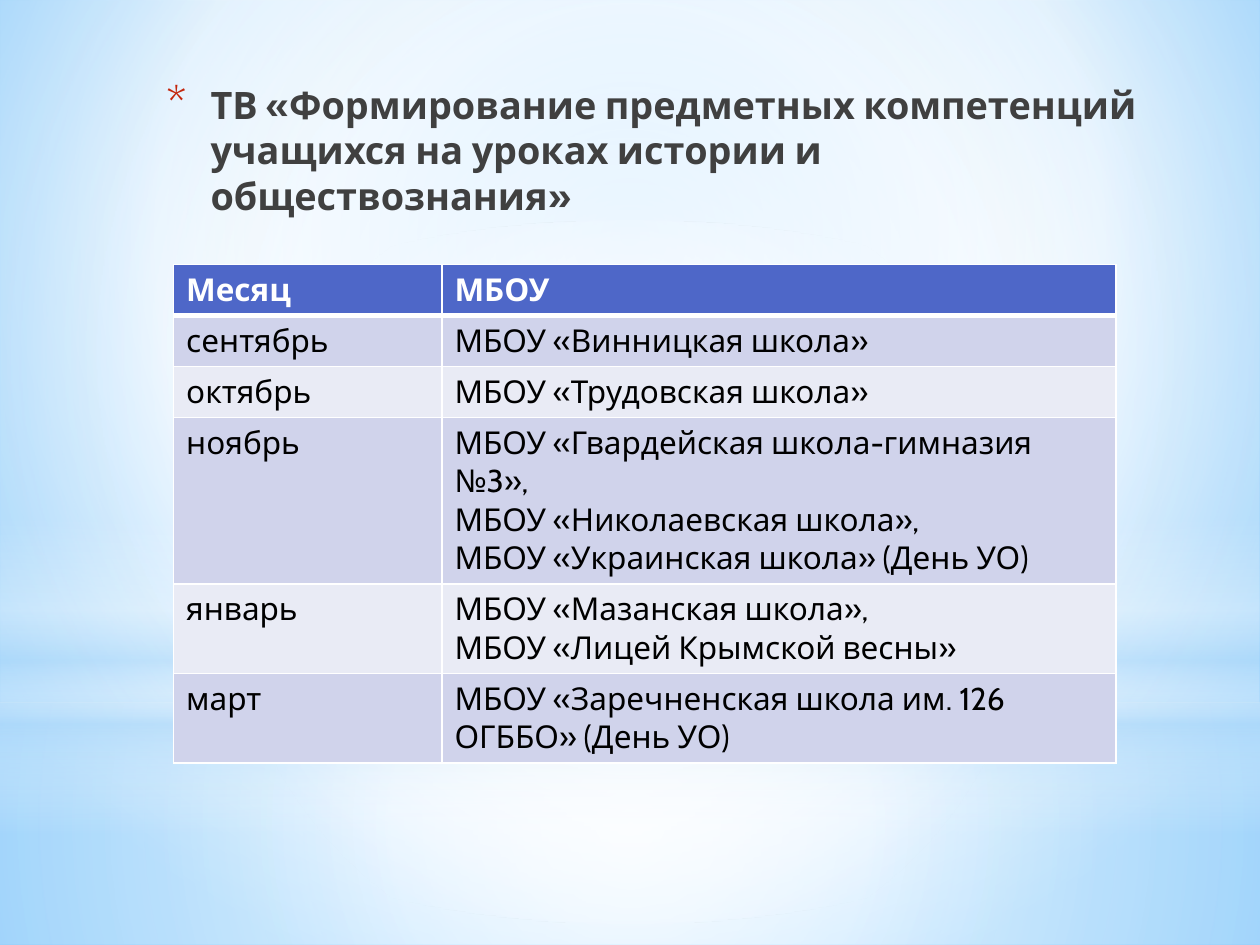
from pptx import Presentation
from pptx.dml.color import RGBColor
from pptx.enum.shapes import MSO_SHAPE as Shape
from pptx.enum.text import MSO_ANCHOR as Anchor, MSO_AUTO_SIZE as AutoSize, PP_ALIGN as Align
from pptx.oxml import parse_xml
from pptx.oxml.ns import nsdecls, qn
from pptx.util import Cm, Pt

WHITE = RGBColor(0xFF, 0xFF, 0xFF)
BLACK = RGBColor(0, 0, 0)
DARK = RGBColor(0x40, 0x40, 0x40)
RED = RGBColor(0xC3, 0x26, 0x0C)
SKY = RGBColor(0xB4, 0xDC, 0xFA)
SKY_MID = RGBColor(0x9E, 0xD5, 0xFF)
SKY_DEEP = RGBColor(0x5B, 0xB9, 0xFF)
HEADER = RGBColor(0x4E, 0x67, 0xC8)
BANDS = RGBColor(0xE9, 0xEB, 0xF5), RGBColor(0xD0, 0xD3, 0xEB)
CENTER = 50, 50, 50, 50

TITLE = "ТВ «Формирование предметных компетенций учащихся на уроках истории и обществознания»"
ROWS = [
    ("Месяц", "МБОУ"),
    ("сентябрь", "МБОУ «Винницкая школа»"),
    ("октябрь", "МБОУ «Трудовская школа»"),
    ("ноябрь", "МБОУ «Гвардейская школа-гимназия №3»,\nМБОУ «Николаевская школа»,\n"
               "МБОУ «Украинская школа» (День УО)"),
    ("январь", "МБОУ «Мазанская школа»,\nМБОУ «Лицей Крымской весны»"),
    ("март", "МБОУ «Заречненская школа им. 126 ОГББО» (День УО)"),
]


class Deck:
    """Holds the style and the current slide."""

    font = "Cabin"

    def __init__(self, prs):
        self.s = prs.slides.add_slide(prs.slide_layouts[5])

    def gradient(self, owner, element, stops, focus=None):
        owner.fill.gradient()
        old = element.find(".//" + qn("a:gradFill"))
        gs = "".join(
            f'<a:gs pos="{pos * 1000}"><a:srgbClr val="{color}">'
            f'<a:alpha val="{alpha * 1000}"/></a:srgbClr></a:gs>'
            for pos, color, alpha in stops)
        direction = '<a:lin ang="5400000" scaled="0"/>'
        if focus:
            left, top, right, bottom = (v * 1000 for v in focus)
            direction = (f'<a:path path="circle"><a:fillToRect l="{left}" t="{top}" '
                         f'r="{right}" b="{bottom}"/></a:path>')
        old.getparent().replace(old, parse_xml(
            f'<a:gradFill {nsdecls("a")} rotWithShape="1"><a:gsLst>{gs}</a:gsLst>'
            f'{direction}</a:gradFill>'))

    def background(self, stops, focus):
        self.gradient(self.s.background, self.s.element, stops, focus)

    def glow(self, kind, top, height, stops, focus=None):
        sp = self.s.shapes.add_shape(kind, 0, Cm(top), Cm(25.4), Cm(height))
        sp.shadow.inherit = False
        sp.line.fill.background()
        self.gradient(sp, sp.element, stops, focus)

    def style(self, p, size, color, bold):
        for r in p.runs:
            r.font.name = self.font
            r.font.size = Pt(size)
            r.font.color.rgb = color
            r.font.bold = bold

    def title(self, text, left, top, width, height):
        sp = self.s.shapes.title
        sp.element.getparent().append(sp.element)
        sp.left, sp.top, sp.width, sp.height = Cm(left), Cm(top), Cm(width), Cm(height)
        tf = sp.text_frame
        tf.text = text
        tf.word_wrap = True
        tf.auto_size = AutoSize.NONE
        tf.vertical_anchor = Anchor.TOP
        p = tf.paragraphs[0]
        p.alignment = Align.LEFT
        pPr = p._p.get_or_add_pPr()
        pPr.set("marL", str(Cm(0.89)))
        pPr.set("indent", str(Cm(-0.89)))
        for xml in (f'<a:buClr {nsdecls("a")}><a:srgbClr val="{RED}"/></a:buClr>',
                    f'<a:buSzPct {nsdecls("a")} val="128000"/>',
                    f'<a:buFont {nsdecls("a")} typeface="{self.font}"/>',
                    f'<a:buChar {nsdecls("a")} char="*"/>'):
            pPr.append(parse_xml(xml))
        self.style(p, 21.6, DARK, True)

    def borders(self, cell, top, bottom):
        tcPr = cell._tc.get_or_add_tcPr()
        for i, (side, width) in enumerate(zip("LRTB", (1, 1, top, bottom))):
            tcPr.insert(i, parse_xml(
                f'<a:ln{side} {nsdecls("a")} w="{Pt(width)}"><a:solidFill>'
                f'<a:srgbClr val="{WHITE}"/></a:solidFill></a:ln{side}>'))

    def table(self, rows, left, top, widths, row_height):
        table = self.s.shapes.add_table(
            len(rows), len(widths), Cm(left), Cm(top),
            Cm(sum(widths)), Cm(row_height * len(rows))).table
        for column, width in zip(table.columns, widths):
            column.width = Cm(width)
        for i, row in enumerate(rows):
            table.rows[i].height = Cm(row_height)
            head = i == 0
            for j, text in enumerate(row):
                cell = table.cell(i, j)
                cell.text = text
                cell.fill.solid()
                cell.fill.fore_color.rgb = HEADER if head else BANDS[i % 2]
                self.borders(cell, 3 if i == 1 else 1, 3 if head else 1)
                for p in cell.text_frame.paragraphs:
                    self.style(p, 18, WHITE if head else BLACK, head)


def main():
    prs = Presentation()
    prs.slide_width, prs.slide_height = Cm(25.4), Cm(19.05)
    deck = Deck(prs)
    deck.background([(0, SKY_MID, 100), (60, WHITE, 100), (100, SKY_DEEP, 100)],
                    (20, 10, 20, 60))
    deck.glow(Shape.RECTANGLE, 14.17, 4.88,
              [(0, WHITE, 91), (37, WHITE, 76), (100, SKY, 79)], CENTER)
    deck.glow(Shape.RECTANGLE, 0, 14.17,
              [(0, WHITE, 89), (48, WHITE, 62), (100, SKY, 79)], CENTER)
    deck.glow(Shape.RECTANGLE, 10.46, 6.35,
              [(0, WHITE, 0), (29, WHITE, 30), (45, SKY, 40),
               (55, WHITE, 26), (65, SKY, 60), (100, WHITE, 0)])
    deck.glow(Shape.OVAL, 4.45, 14.17, [(0, WHITE, 100), (56, WHITE, 0)], CENTER)
    deck.title(TITLE, 3.1, 1.52, 20.19, 3.18)
    deck.table(ROWS, 3.5, 5.33, (5.41, 13.59), 1.03)
    prs.save("out.pptx")


if __name__ == "__main__":
    main()
